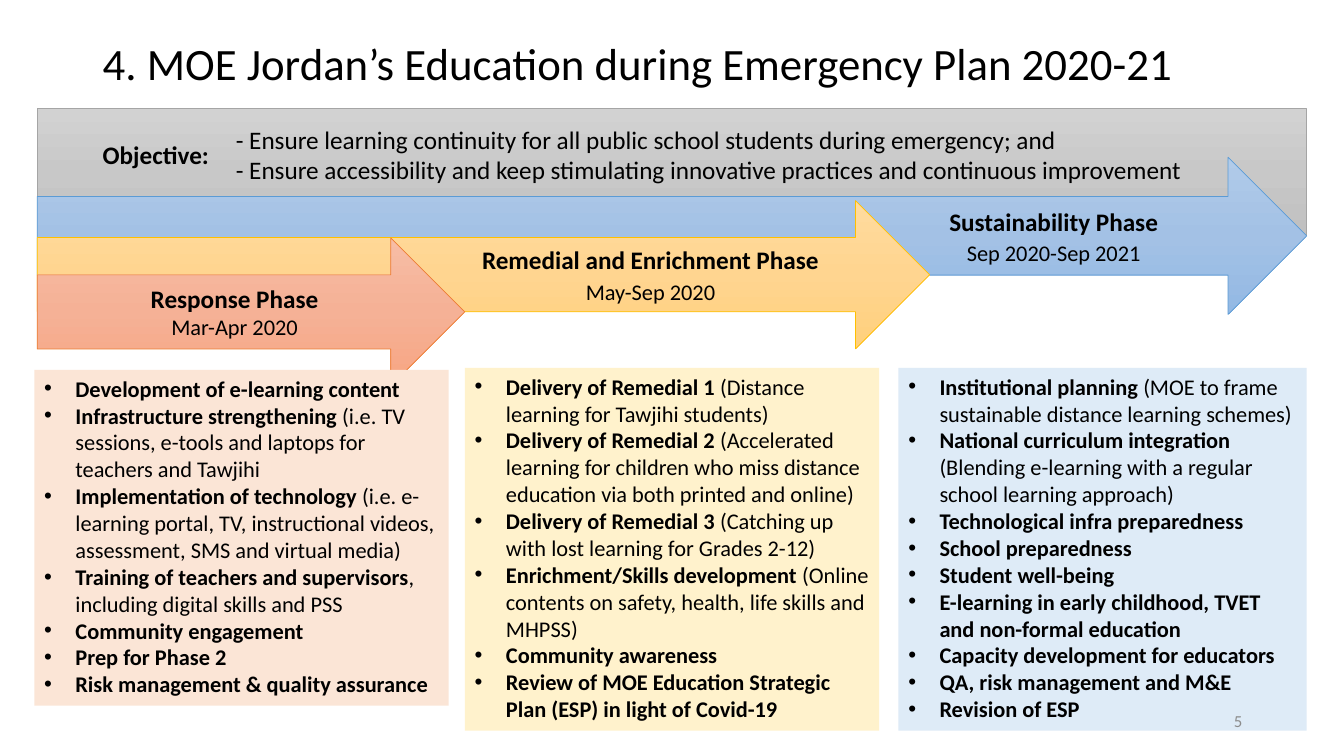
import copy
import pptx
import pptx.util
import pptx.dml.color
import pptx.enum.shapes
import pptx.enum.text
import pptx.oxml.ns

Shape = pptx.enum.shapes.MSO_SHAPE
Align = pptx.enum.text.PP_ALIGN
Anchor = pptx.enum.text.MSO_ANCHOR
Fit = pptx.enum.text.MSO_AUTO_SIZE
Pt = pptx.util.Pt
qn = pptx.oxml.ns.qn

# Content
TITLE = "4. MOE Jordan’s Education during Emergency Plan 2020-21"
LABEL = "Objective:"
GOALS = [
    "- Ensure learning continuity for all public school students during emergency; and",
    "- Ensure accessibility and keep stimulating innovative practices and continuous improvement",
]
PAGE = "5"
# Phases from back to front: name, dates, colour key, box, left inset, gap
PHASES = [
    ("Sustainability Phase", "Sep 2020-Sep 2021", "blue", (37, 156, 1259, 156), 806, 2),
    ("Remedial and Enrichment Phase", "May-Sep 2020", "gold", (37, 199, 885, 147), 378, 2),
    ("Response Phase", "Mar-Apr 2020", "red", (37, 236, 424, 147), 14, 0),
]
# Panels: colour key, box, items as (bold part, plain part)
PANELS = [
    ("red", (34, 367, 411, 333), [
        ("Development of e-learning content", ""),
        ("Infrastructure strengthening ",
         "(i.e. TV sessions, e-tools and laptops for teachers and Tawjihi"),
        ("Implementation of technology ",
         "(i.e. e-learning portal, TV, instructional videos, assessment, SMS and virtual media)"),
        ("Training of teachers and supervisors", ", including digital skills and PSS"),
        ("Community engagement", ""),
        ("Prep for Phase 2", ""),
        ("Risk management & quality assurance", ""),
    ]),
    ("gold", (461, 365, 411, 360), [
        ("Delivery of Remedial 1 ", "(Distance learning for Tawjihi students)"),
        ("Delivery of Remedial 2 ",
         "(Accelerated learning for children who miss distance education via both printed and online)"),
        ("Delivery of Remedial 3 ", "(Catching up with lost learning for Grades 2-12)"),
        ("Enrichment/Skills development ",
         "(Online contents on safety, health, life skills and MHPSS)"),
        ("Community awareness", ""),
        ("Review of MOE Education Strategic Plan (ESP) in light of Covid-19", ""),
    ]),
    ("blue", (891, 365, 405, 360), [
        ("Institutional planning ", "(MOE to frame sustainable distance learning schemes)"),
        ("National curriculum integration",
         " (Blending e-learning with a regular school learning approach)"),
        ("Technological infra preparedness", ""),
        ("School preparedness", ""),
        ("Student well-being", ""),
        ("E-learning in early childhood, TVET and non-formal education", ""),
        ("Capacity development for educators", ""),
        ("QA, risk management and M&E", ""),
        ("Revision of ESP", ""),
    ]),
]

THEME = {
    "font": "Calibri", "ink": "000000", "dim": "8C8C8C",
    "title": 32, "head": 18, "body": 16, "page": 12,
    "line": 0.5,
    "grad": {
        "grey": ("D2D2D2", "C8C8C8", "C0C0C0"),
        "blue": ("B1CBE9", "A3C1E5", "93B9E4"),
        "gold": ("FFDB9E", "FFD590", "FFD07C"),
        "red": ("F7BDA5", "F5B196", "F8A582"),
    },
    "edge": {"grey": "A5A5A5", "blue": "5B9BD5", "gold": "FFC000", "red": "ED7D31"},
    "pale": {"blue": "DEEBF7", "gold": "FFF2CC", "red": "FBE5D6"},
}


# Helpers
def px(n):
    return pptx.util.Emu(n * 9144)


def rgb(code):
    return pptx.dml.color.RGBColor.from_string(code)


def apply(thing, vals):
    for name, val in vals.items():
        setattr(thing, name, val)


def write(frame, lines, paras=({},), **form):
    """Each line is a list of runs: (text, size key, bold, colour key)."""
    apply(frame, {"word_wrap": True, "vertical_anchor": Anchor.TOP, **form})
    for i, runs in enumerate(lines):
        para = frame.paragraphs[0] if i == 0 else frame.add_paragraph()
        apply(para, {"alignment": Align.LEFT, **paras[min(i, len(paras) - 1)]})
        for text, size, bold, ink in runs:
            run = para.add_run()
            run.text = text
            apply(run.font, {"name": THEME["font"], "size": Pt(THEME[size]), "bold": bold})
            run.font.color.rgb = rgb(THEME[ink])


def label(slide, box, lines, **opts):
    write(slide.shapes.add_textbox(*map(px, box)).text_frame, lines, **opts)


def block(slide, kind, box):
    shape = slide.shapes.add_shape(kind, *map(px, box))
    shape.shadow.inherit = False
    return shape


def shade(shape, key):
    fill = shape.fill
    fill.gradient()
    fill.gradient_angle = 270
    stops = shape._element.spPr.find(".//" + qn("a:gsLst"))
    stops.insert(1, copy.deepcopy(stops[0]))
    for i, (stop, code) in enumerate(zip(fill.gradient_stops, THEME["grad"][key])):
        stop.color.rgb = rgb(code)
        stop.position = i / 2
    shape.line.color.rgb = rgb(THEME["edge"][key])
    shape.line.width = Pt(THEME["line"])


def bullet(para):
    props = para._p.get_or_add_pPr()
    props.set("marL", str(px(31)))
    props.set("indent", str(-px(31)))
    font = props.makeelement(qn("a:buFont"), {"typeface": "Arial"})
    mark = props.makeelement(qn("a:buChar"), {"char": "•"})
    props.extend([font, mark])


def main():
    deck = pptx.Presentation()
    apply(deck, {"slide_width": px(1333), "slide_height": px(750)})
    slide = deck.slides.add_slide(deck.slide_layouts[6])

    # Title
    label(slide, (92, 40, 1150, 50), [[(TITLE, "title", False, "ink")]],
          paras=[{"line_spacing": 0.9}], vertical_anchor=Anchor.MIDDLE)

    # Objective band and phase arrows
    shade(block(slide, Shape.RECTANGLE, (37, 108, 1259, 126)), "grey")
    for name, dates, key, box, inset, gap in PHASES:
        arrow = block(slide, Shape.RIGHT_ARROW, box)
        shade(arrow, key)
        write(arrow.text_frame,
              [[(name, "head", True, "ink")], [(dates, "body", False, "ink")]],
              paras=[{"alignment": Align.CENTER},
                     {"alignment": Align.CENTER, "space_before": Pt(gap)}],
              vertical_anchor=Anchor.MIDDLE, margin_left=px(inset))

    # Objective text
    label(slide, (224, 118, 999, 71), [[(goal, "head", False, "ink")] for goal in GOALS])
    label(slide, (92, 133, 195, 40), [[(LABEL, "head", True, "ink")]])

    # Phase panels
    for key, box, items in PANELS:
        panel = block(slide, Shape.RECTANGLE, box)
        panel.fill.solid()
        panel.fill.fore_color.rgb = rgb(THEME["pale"][key])
        panel.line.fill.background()
        lines = [[(text, "body", bold, "ink")
                  for text, bold in ((strong, True), (plain, False)) if text]
                 for strong, plain in items]
        write(panel.text_frame, lines, auto_size=Fit.SHAPE_TO_FIT_TEXT)
        for para in panel.text_frame.paragraphs:
            bullet(para)

    # Page number
    label(slide, (942, 695, 300, 40), [[(PAGE, "page", False, "dim")]],
          paras=[{"alignment": Align.RIGHT}], vertical_anchor=Anchor.MIDDLE)

    deck.save("out.pptx")


if __name__ == "__main__":
    main()
